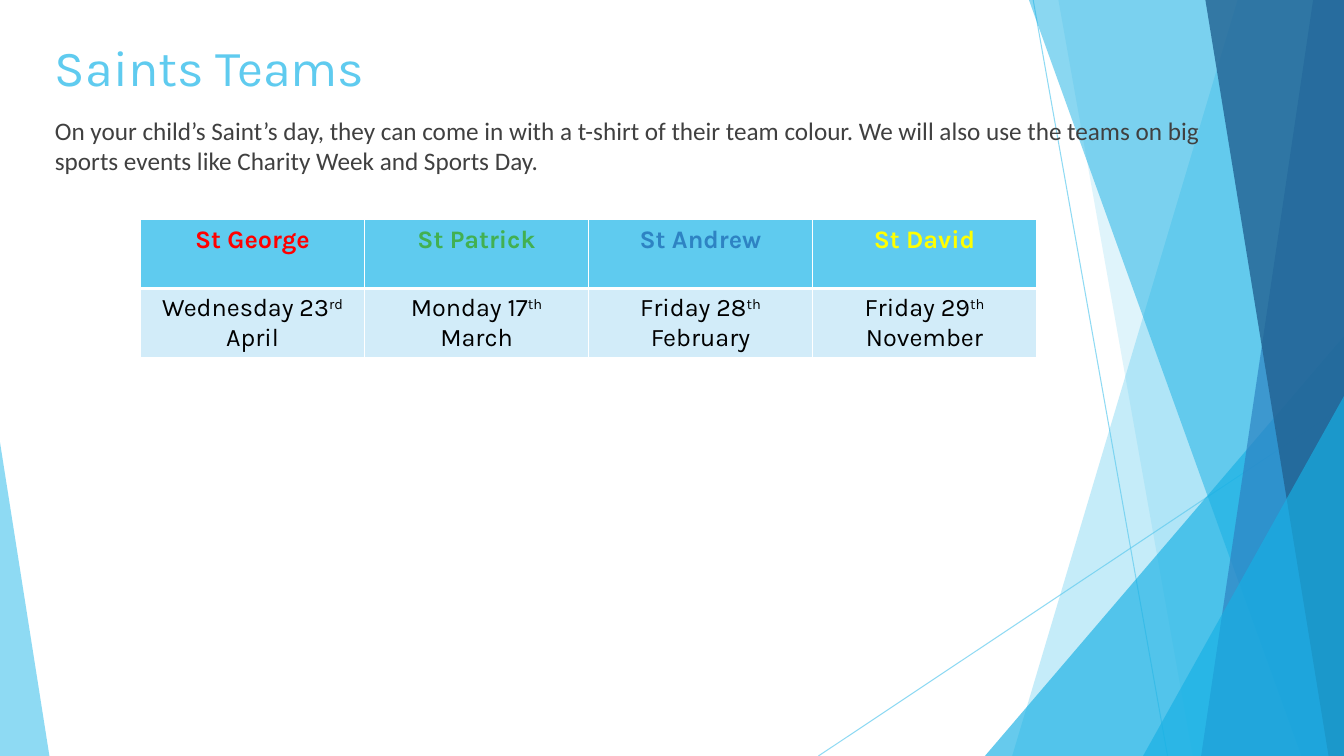
from dataclasses import dataclass
from typing import NamedTuple

from pptx import Presentation
from pptx.dml import color
from pptx.enum import shapes, text
from pptx.oxml import xmlchemy
from pptx.util import Pt


@dataclass(frozen=True)
class Theme:
    sky: str = "5FCBEF"
    cyan: str = "17B0E4"
    blue: str = "2E83C3"
    navy: str = "226292"
    pale: str = "D2ECF9"
    white: str = "FFFFFF"
    body_text: str = "404040"
    black: str = "000000"
    heading_font: str = "Karla"
    body_font: str = "Calibri"
    title_size: float = 36
    text_size: float = 18


class Ray(NamedTuple):
    start: tuple[float, float]
    end: tuple[float, float]


class Stripe(NamedTuple):
    """A band that reaches the right edge, with a slanted left side."""
    top_x: float
    bottom_x: float
    fill: str
    opacity: int


class Corner(NamedTuple):
    """A right-angled triangle standing on the bottom edge."""
    left: float
    top: float
    width: float
    apex: float
    fill: str
    opacity: int


class Team(NamedTuple):
    name: str
    colour: str
    day: str
    suffix: str
    month: str


THEME = Theme()
WIDTH, HEIGHT = 960, 540

RAYS = [Ray((738, 0), (834, 540)), Ray((960, 290), (584.6, 540))]
FACETS = [
    Stripe(884, 723, THEME.sky, 36),
    Stripe(756, 852, THEME.sky, 20),
    Corner(703.5, 240, 256.5, 1, THEME.cyan, 66),
    Stripe(735, 929.5, THEME.cyan, 50),
    Stripe(938, 858, THEME.blue, 70),
    Stripe(861, 949, THEME.navy, 80),
    Corner(816.5, 283, 143.5, 1, THEME.cyan, 66),
    Corner(0, 316, 35.3, 0, THEME.sky, 70),
]
TEAMS = [
    Team("St George", "FF0000", "Wednesday 23", "rd", "April"),
    Team("St Patrick", "42B051", "Monday 17", "th", "March"),
    Team("St Andrew", THEME.blue, "Friday 28", "th", "February"),
    Team("St David", "FFFF00", "Friday 29", "th", "November"),
]
INTRO = ("On your child’s Saint’s day, they can come in with a t-shirt of their team colour. "
         "We will also use the teams on big sports events like Charity Week and Sports Day.")


def rgb(value: str) -> color.RGBColor:
    return color.RGBColor.from_string(value)


def add_child(parent, tag: str, **attributes):
    child = xmlchemy.OxmlElement(tag)
    for name, value in attributes.items():
        child.set(name, str(value))
    parent.append(child)
    return child


def set_opacity(fill, percent: int) -> None:
    element = fill._xPr.find(".//{*}srgbClr")
    add_child(element, "a:alpha", val=percent * 1000)


def style_font(font, name: str, size: float, colour: str, bold: bool = False) -> None:
    font.name, font.size, font.bold = name, Pt(size), bold
    font.color.rgb = rgb(colour)


def add_ray(slide, ray: Ray) -> None:
    line = slide.shapes.add_connector(
        shapes.MSO_CONNECTOR.STRAIGHT, *(Pt(value) for value in ray.start + ray.end))
    line.line.width = Pt(0.75)
    line.line.fill.solid()
    line.line.fill.fore_color.rgb = rgb(THEME.sky)
    set_opacity(line.line.fill, 70)
    add_child(line.element.spPr, "a:effectLst")


def add_facet(slide, facet: Stripe | Corner) -> None:
    if isinstance(facet, Stripe):
        builder = slide.shapes.build_freeform(Pt(facet.top_x), 0)
        builder.add_line_segments(
            [(Pt(WIDTH), 0), (Pt(WIDTH), Pt(HEIGHT)), (Pt(facet.bottom_x), Pt(HEIGHT))])
        shape = builder.convert_to_shape()
    else:
        shape = slide.shapes.add_shape(
            shapes.MSO_SHAPE.ISOSCELES_TRIANGLE, Pt(facet.left), Pt(facet.top),
            Pt(facet.width), Pt(HEIGHT - facet.top))
        shape.adjustments[0] = facet.apex
    shape.shadow.inherit = False
    shape.line.fill.background()
    shape.fill.solid()
    shape.fill.fore_color.rgb = rgb(facet.fill)
    set_opacity(shape.fill, facet.opacity)


def fill_placeholder(slide, shape, content: str, box: tuple[float, ...],
                     font: str, size: float, colour: str) -> None:
    shape.left, shape.top, shape.width, shape.height = (Pt(value) for value in box)
    frame = shape.text_frame
    frame.text = content
    frame.auto_size = text.MSO_AUTO_SIZE.NONE
    frame.vertical_anchor = text.MSO_ANCHOR.TOP
    paragraph = frame.paragraphs[0]
    paragraph.alignment = text.PP_ALIGN.LEFT
    paragraph.space_before = Pt(0)
    properties = paragraph._p.get_or_add_pPr()
    properties.set("marL", "0")
    properties.set("indent", "0")
    add_child(properties, "a:buNone")
    style_font(paragraph.font, font, size, colour)
    slide.shapes.element.append(shape.element)  # bring in front of the facets


def format_cell(cell, fill: str, bottom_border: float) -> None:
    properties = cell._tc.get_or_add_tcPr()
    for side, width in (("L", 1), ("R", 1), ("T", 1), ("B", bottom_border)):
        border = add_child(properties, f"a:ln{side}", w=Pt(width))
        add_child(add_child(border, "a:solidFill"), "a:srgbClr", val=THEME.white)
    cell.fill.solid()
    cell.fill.fore_color.rgb = rgb(fill)


def add_team_table(slide, teams: list[Team]) -> None:
    frame = slide.shapes.add_table(2, len(teams), Pt(100.4), Pt(157), Pt(640), Pt(98))
    for column, team in enumerate(teams):
        header, date = (frame.table.cell(row, column) for row in range(2))
        format_cell(header, THEME.sky, 3)
        format_cell(date, THEME.pale, 1)
        header.text = team.name
        paragraph = date.text_frame.paragraphs[0]
        for content in (team.day, team.suffix, f" {team.month}"):
            paragraph.add_run().text = content
        paragraph.runs[1].font._element.set("baseline", "30000")
        for cell, colour, bold in ((header, team.colour, True), (date, THEME.black, False)):
            paragraph = cell.text_frame.paragraphs[0]
            paragraph.alignment = text.PP_ALIGN.CENTER
            style_font(paragraph.font, THEME.heading_font, THEME.text_size, colour, bold)


def main() -> None:
    presentation = Presentation()
    presentation.slide_width, presentation.slide_height = Pt(WIDTH), Pt(HEIGHT)
    slide = presentation.slides.add_slide(presentation.slide_layouts[1])

    # Faceted background
    for ray in RAYS:
        add_ray(slide, ray)
    for facet in FACETS:
        add_facet(slide, facet)

    # Title and introduction
    fill_placeholder(slide, slide.shapes.title, "Saints Teams", (32, 22.4, 677, 62),
                     THEME.heading_font, THEME.title_size, THEME.sky)
    fill_placeholder(slide, slide.placeholders[1], INTRO, (32, 78.5, 854, 305),
                     THEME.body_font, THEME.text_size, THEME.body_text)

    # Team days
    add_team_table(slide, TEAMS)
    presentation.save("out.pptx")


if __name__ == "__main__":
    main()
